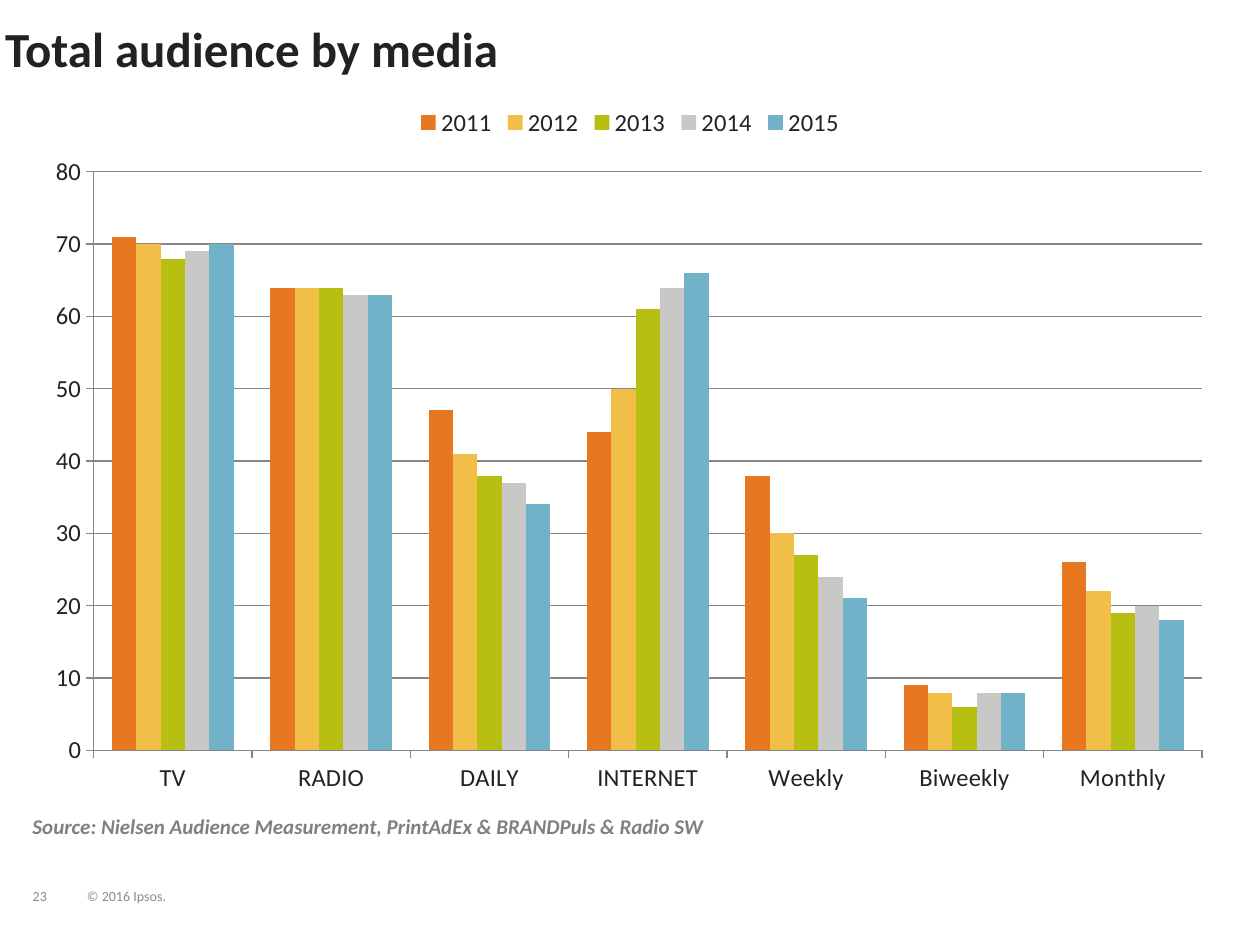
from lxml import etree
from pptx import Presentation
from pptx.chart.data import CategoryChartData
from pptx.dml.color import RGBColor
from pptx.enum.chart import XL_CHART_TYPE, XL_LEGEND_POSITION, XL_TICK_MARK
from pptx.enum.text import MSO_ANCHOR, PP_ALIGN
from pptx.util import Inches, Pt

COLUMNS = XL_CHART_TYPE.COLUMN_CLUSTERED
LEGEND_TOP = XL_LEGEND_POSITION.TOP
TICK_OUT, TICK_NONE = XL_TICK_MARK.OUTSIDE, XL_TICK_MARK.NONE
TOP, BOTTOM = MSO_ANCHOR.TOP, MSO_ANCHOR.BOTTOM
LEFT = PP_ALIGN.LEFT

FONT = "Calibri"
COLORS = {"text": "222223", "footer": "888B8D", "source": "808080", "line": "868686",
          "2011": "E87722", "2012": "F1BE48", "2013": "B7BF12",
          "2014": "C8C9C7", "2015": "71B2C9"}
MEDIA = ["TV", "RADIO", "DAILY", "INTERNET", "Weekly", "Biweekly", "Monthly"]
AUDIENCE = {
    "2011": [71, 64, 47, 44, 38, 9, 26],
    "2012": [70, 64, 41, 50, 30, 8, 22],
    "2013": [68, 64, 38, 61, 27, 6, 19],
    "2014": [69, 63, 37, 64, 24, 8, 20],
    "2015": [70, 63, 34, 66, 21, 8, 18],
}
# Plot area as shares of the chart frame
PLOT_SHARES = {"x": 0.05, "y": 0.11, "w": 0.93, "h": 0.81}


def style_font(font, size, color, bold=False, italic=False):
    font.name, font.size = FONT, Pt(size)
    font.bold, font.italic = bold, italic
    font.color.rgb = RGBColor.from_string(COLORS[color])


def fill_frame(frame, text, anchor, margin=0, wrap=True):
    frame.text = text
    frame.word_wrap = wrap
    frame.vertical_anchor = anchor
    frame.margin_left = frame.margin_right = Inches(margin)
    frame.margin_top = frame.margin_bottom = Inches(margin / 2)
    return frame.paragraphs[0]


prs = Presentation()
prs.slide_width, prs.slide_height = Inches(10), Inches(7.5)
slide = prs.slides.add_slide(prs.slide_layouts[5])

# Title
title = slide.shapes.title
title.left, title.top, title.width, title.height = map(Inches, (0.04, 0.15, 7.35, 0.59))
heading = fill_frame(title.text_frame, "Total audience by media", TOP)
heading.alignment = LEFT
style_font(heading.font, 28, "text", bold=True)

# Audience chart
data = CategoryChartData()
data.categories = MEDIA
for year, shares in AUDIENCE.items():
    data.add_series(year, shares)
chart = slide.shapes.add_chart(COLUMNS, Inches(0.27), Inches(0.74),
                               Inches(9.46), Inches(5.67), data).chart
style_font(chart.font, 18, "text")
chart.has_title = False
chart.has_legend = True
chart.legend.position = LEGEND_TOP
chart.legend.include_in_layout = False
style_font(chart.legend.font, 14, "text")

bars = chart.plots[0]
bars.gap_width, bars.overlap = 150, 0
bars.vary_by_categories = False
for series in bars.series:
    series.format.fill.solid()
    series.format.fill.fore_color.rgb = RGBColor.from_string(COLORS[series.name])

# Axes and gridlines
media_axis, share_axis = chart.category_axis, chart.value_axis
share_axis.minimum_scale, share_axis.maximum_scale, share_axis.major_unit = 0, 80, 10
share_axis.has_major_gridlines = True
for axis in (media_axis, share_axis):
    axis.major_tick_mark, axis.minor_tick_mark = TICK_OUT, TICK_NONE
    style_font(axis.tick_labels.font, 14, "text")
for ruled in (media_axis, share_axis, share_axis.major_gridlines):
    ruled.format.line.width = Pt(0.75)
    ruled.format.line.color.rgb = RGBColor.from_string(COLORS["line"])

# Fixed plot area
plot_area = chart._chartSpace.chart.plotArea
ns = etree.QName(plot_area).namespace
for old in plot_area.findall(f"{{{ns}}}layout"):
    plot_area.remove(old)
layout = etree.Element(f"{{{ns}}}layout")
manual = etree.SubElement(layout, f"{{{ns}}}manualLayout")
settings = {"layoutTarget": "inner", "xMode": "edge", "yMode": "edge", **PLOT_SHARES}
for tag, value in settings.items():
    etree.SubElement(manual, f"{{{ns}}}{tag}", val=str(value))
plot_area.insert(0, layout)

# Source line
source_box = slide.shapes.add_textbox(*map(Inches, (0.16, 6.41, 8.83, 0.3)))
source = fill_frame(
    source_box.text_frame,
    "Source: Nielsen Audience Measurement, PrintAdEx & BRANDPuls & Radio SW", TOP, margin=0.1)
style_font(source.font, 12, "source", bold=True, italic=True)

# Page number and copyright
for text, left, top, width, height in [("23", 0.26, 6.83, 0.34, 0.35),
                                       ("© 2016 Ipsos.", 0.69, 6.93, 0.76, 0.25)]:
    footer_box = slide.shapes.add_textbox(*map(Inches, (left, top, width, height)))
    footer = fill_frame(footer_box.text_frame, text, BOTTOM, wrap=False)
    footer.alignment = LEFT
    footer.line_spacing = 0.85
    style_font(footer.font, 8, "footer")

prs.save("out.pptx")
